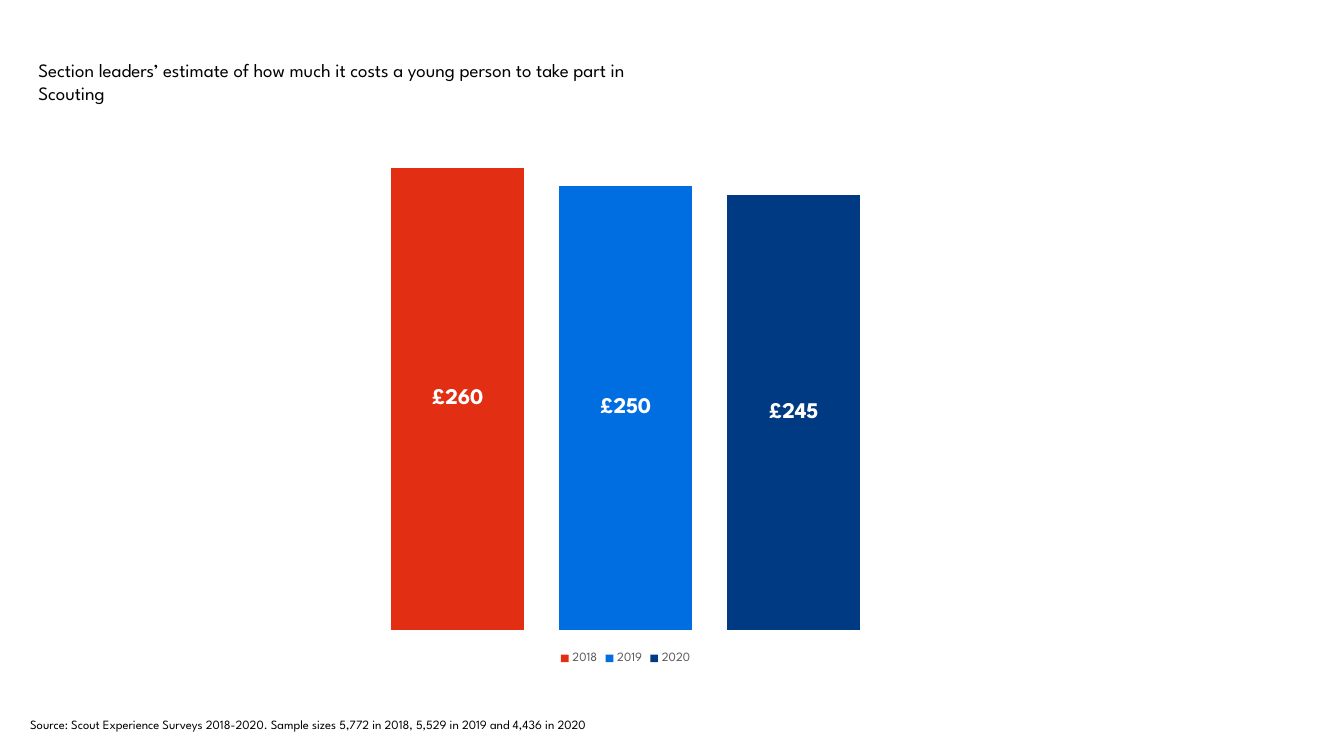
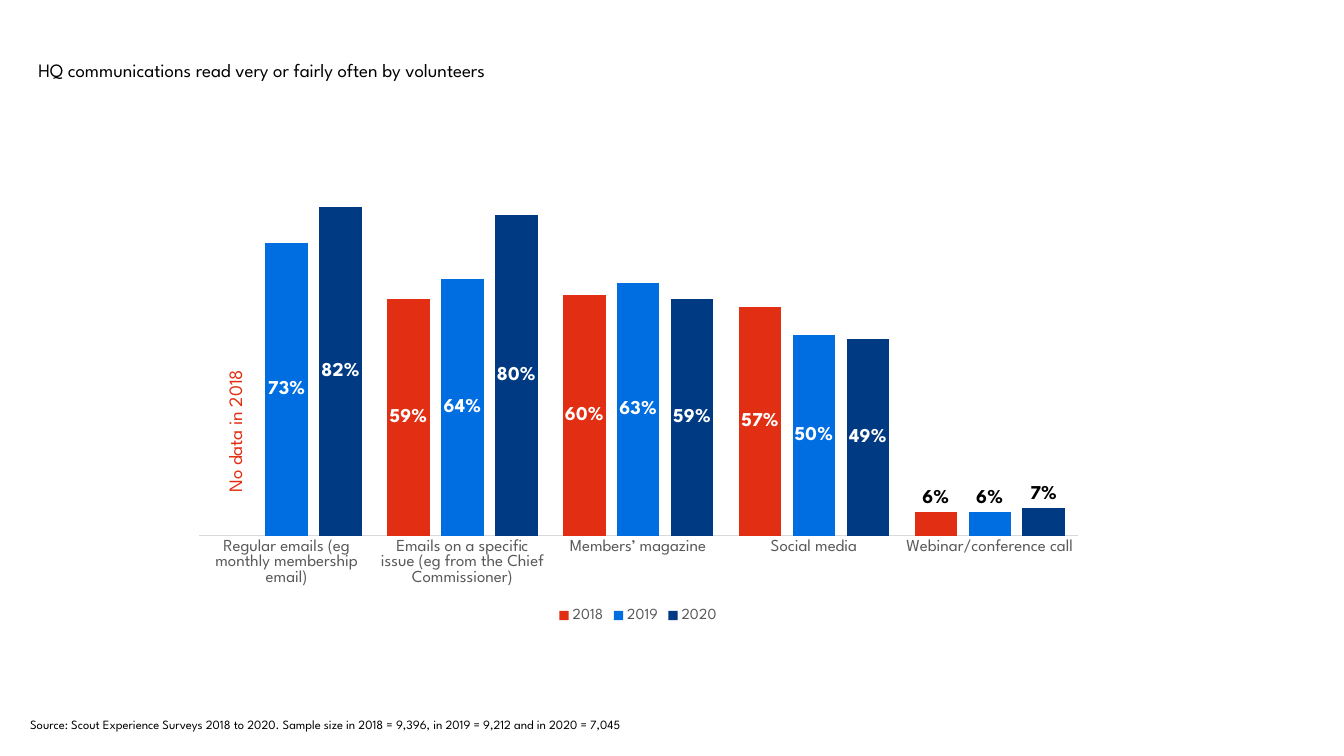
from dataclasses import dataclass

from pptx import Presentation
from pptx.chart.data import CategoryChartData
from pptx.dml.color import RGBColor
from pptx.enum.chart import XL_CHART_TYPE, XL_LABEL_POSITION, XL_LEGEND_POSITION, XL_TICK_MARK
from pptx.util import Inches, Pt

COLUMNS = XL_CHART_TYPE.COLUMN_CLUSTERED
CENTER = XL_LABEL_POSITION.CENTER
OUTSIDE = XL_LABEL_POSITION.OUTSIDE_END
BOTTOM = XL_LEGEND_POSITION.BOTTOM
NO_TICK = XL_TICK_MARK.NONE


@dataclass(frozen=True)
class Theme:
    """Colours, font and type sizes shared by the slides."""
    font: str = "League Spartan"
    black: str = "000000"
    white: str = "FFFFFF"
    grey: str = "595959"
    rule: str = "D9D9D9"
    red: str = "E22E12"
    blue: str = "006EE0"
    navy: str = "003A82"
    title: float = 13.5
    source: float = 9
    chart: float = 10
    axis: float = 12


THEME = Theme()
YEAR_COLORS = {"2018": THEME.red, "2019": THEME.blue, "2020": THEME.navy}


def rgb(color):
    """Turn a hex string into a colour."""
    return RGBColor.from_string(color)


def style_font(font, size, color, bold=False):
    """Apply the theme font with a size and colour."""
    font.name = THEME.font
    font.size = Pt(size)
    font.color.rgb = rgb(color)
    font.bold = bold


def add_text(s, box, text, size, color=THEME.black, inset=True, rotation=0):
    """Add one wrapped paragraph in the given box."""
    shape = s.shapes.add_textbox(*map(Inches, box))
    shape.rotation = rotation
    tf = shape.text_frame
    tf.word_wrap = True
    if not inset:
        tf.margin_left = tf.margin_right = tf.margin_top = tf.margin_bottom = 0
    tf.text = text
    style_font(tf.paragraphs[0].runs[0].font, size, color)


def add_year_chart(s, box, cats, values, top, fmt, gap, label_size, legend_size):
    """Add a clustered column chart with one series for each year."""
    data = CategoryChartData(number_format=fmt)
    data.categories = cats
    for year, vals in zip(YEAR_COLORS, values):
        data.add_series(year, vals)
    chart = s.shapes.add_chart(COLUMNS, *map(Inches, box), data).chart
    chart.has_title = False
    style_font(chart.font, THEME.chart, THEME.black)

    axis = chart.value_axis
    axis.minimum_scale, axis.maximum_scale = 0, top
    axis.has_major_gridlines = False
    axis.visible = False

    chart.has_legend = True
    chart.legend.position = BOTTOM
    chart.legend.include_in_layout = False
    style_font(chart.legend.font, legend_size, THEME.grey)

    plot = chart.plots[0]
    plot.gap_width, plot.overlap = gap, -27
    plot.vary_by_categories = False
    for ser in plot.series:
        ser.format.fill.solid()
        ser.format.fill.fore_color.rgb = rgb(YEAR_COLORS[ser.name])
        ser.invert_if_negative = False
        labels = ser.data_labels
        labels.show_value = True
        labels.position = CENTER
        labels.number_format = fmt
        labels.number_format_is_linked = False
        style_font(labels.font, label_size, THEME.white, bold=True)
    return chart


def style_category_axis(axis):
    """Show the category names above a thin grey rule."""
    axis.major_tick_mark = axis.minor_tick_mark = NO_TICK
    axis.format.line.color.rgb = rgb(THEME.rule)
    axis.format.line.width = Pt(0.75)
    style_font(axis.tick_labels.font, THEME.axis, THEME.grey)


def lift_labels(chart, index, size):
    """Move the labels of one category above its short columns."""
    for ser in chart.plots[0].series:
        label = ser.points[index].data_label
        style_font(label.font, size, THEME.black, bold=True)
        label.position = OUTSIDE


def new_slide(prs, title, title_height, source, source_width):
    """Add a blank slide with its title and source line."""
    s = prs.slides.add_slide(prs.slide_layouts[6])
    add_text(s, (0.38, 0.58, 6.29, title_height), title, THEME.title, inset=False)
    add_text(s, (0.2, 7.06, source_width, 0.25), source, THEME.source)
    return s


def cost_slide(prs):
    """Build the slide on the cost of taking part."""
    s = new_slide(
        prs, "Section leaders’ estimate of how much it costs a young person to take part in Scouting", 0.45,
        "Source: Scout Experience Surveys 2018-2020. "
        "Sample sizes 5,772 in 2018, 5,529 in 2019 and 4,436 in 2020", 9.51)
    chart = add_year_chart(
        s, (2.29, 1.21, 7.83, 5.42), ["1"], [[260], [250], [245]],
        top=280, fmt="[$£-809]#,##0", gap=219, label_size=16, legend_size=9)
    chart.category_axis.visible = False


def communications_slide(prs):
    """Build the slide on communications read by volunteers."""
    s = new_slide(
        prs, "HQ communications read very or fairly often by volunteers", 0.23,
        "Source: Scout Experience Surveys 2018 to 2020. "
        "Sample size in 2018 = 9,396, in 2019 = 9,212 and in 2020 = 7,045", 7.15)
    cats = ["Regular emails (eg monthly membership email)",
            "Emails on a specific issue (eg from the Chief Commissioner)",
            "Members’ magazine", "Social media", "Webinar/conference call"]
    values = [[None, 0.59, 0.6, 0.57, 0.06],
              [0.73, 0.64, 0.63, 0.5, 0.06],
              [0.82, 0.8, 0.59, 0.49, 0.07]]
    chart = add_year_chart(
        s, (1.79, 1.24, 9.08, 4.98), cats, values,
        top=1, fmt="0%", gap=60, label_size=14, legend_size=11)
    style_category_axis(chart.category_axis)
    lift_labels(chart, len(cats) - 1, 14)
    add_text(s, (1.32, 3.81, 2.02, 0.33), "No data in 2018", THEME.title, THEME.red, rotation=270)


def main():
    """Build and save the presentation."""
    prs = Presentation()
    prs.slide_width, prs.slide_height = Inches(13.33), Inches(7.5)
    cost_slide(prs)
    communications_slide(prs)
    prs.save("out.pptx")


if __name__ == "__main__":
    main()
